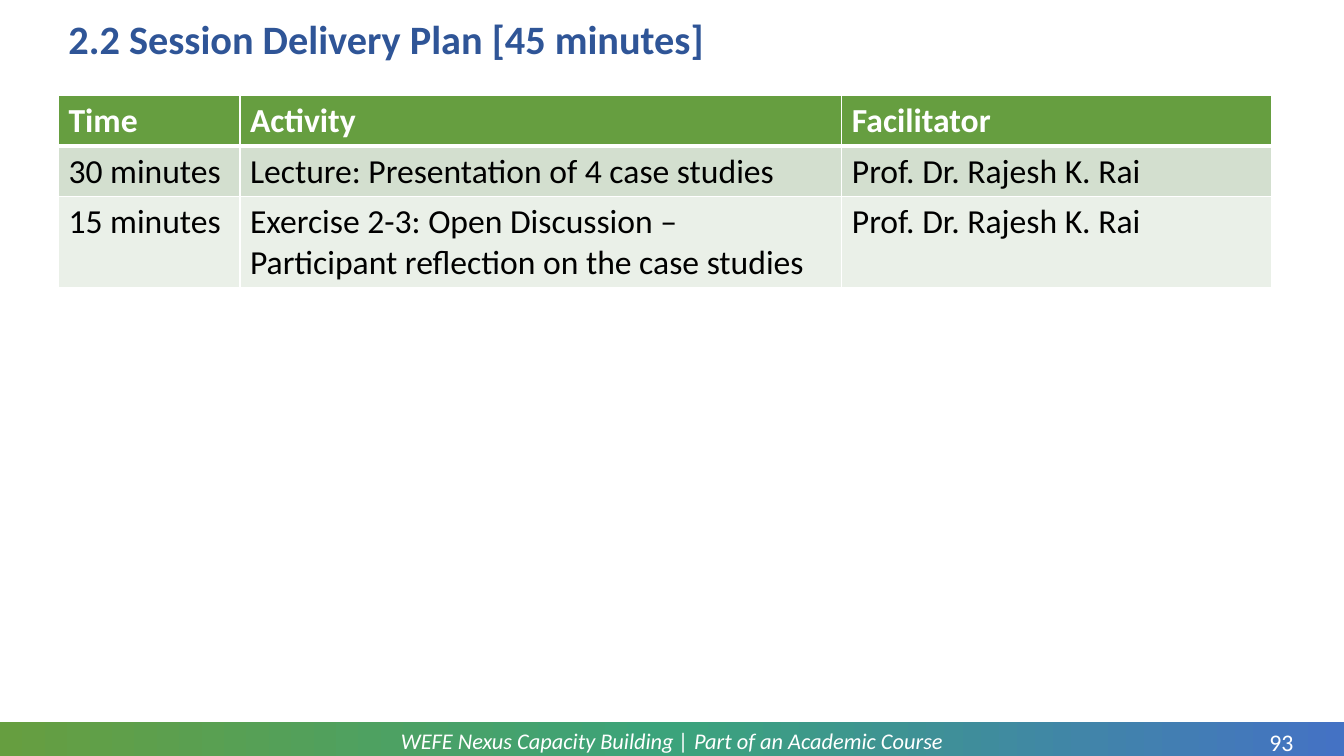
from copy import deepcopy
from dataclasses import dataclass

from lxml.etree import SubElement
from pptx import Presentation
from pptx.dml.color import RGBColor
from pptx.enum.shapes import MSO_SHAPE
from pptx.enum.text import MSO_ANCHOR, PP_ALIGN
from pptx.oxml.ns import qn
from pptx.slide import Slide
from pptx.table import _Cell
from pptx.text.text import TextFrame
from pptx.util import Inches, Pt

SLIDE_WIDTH, SLIDE_HEIGHT = 13.33, 7.5
FONT = "Calibri"
COLOURS = {
    "white": "FFFFFF",
    "black": "000000",
    "title": "2F5597",
    "green": "669E40",
    "teal": "3BA37B",
    "blue": "4472C4",
    "dark_band": "D3DFCF",
    "light_band": "EAF0E8",
}


@dataclass(frozen=True)
class Box:
    left: float
    top: float
    width: float
    height: float

    def lengths(self) -> list[int]:
        return [Inches(value) for value in (self.left, self.top, self.width, self.height)]


@dataclass(frozen=True)
class Label:
    text: str
    box: Box
    size: float
    colour: str = "white"
    bold: bool = False
    italic: bool = False
    align: PP_ALIGN = PP_ALIGN.CENTER
    margin: float = 0
    line_spacing: float = 1.0


@dataclass(frozen=True)
class PlanRow:
    cells: tuple[str, str, str]
    height: float
    fill: str
    colour: str = "black"
    bold: bool = False
    top_border: float = 1
    bottom_border: float = 1


FOOTER = Box(0, 7.16, SLIDE_WIDTH, SLIDE_HEIGHT - 7.16)
LABELS = [
    Label("WEFE Nexus Capacity Building | Part of an Academic Course",
          Box(0.92, 7.17, 11.49, 0.36), 16, italic=True),
    Label("93", Box(12.41, 7.22, 0.6, 0.29), 17),
    Label("2.2 Session Delivery Plan [45 minutes]", Box(0.58, 0.13, 12.15, 0.56), 28.8,
          colour="title", bold=True, align=PP_ALIGN.LEFT, margin=0.1, line_spacing=0.9),
]
COLUMN_WIDTHS = (1.8, 5.97, 4.26)
PLAN = [
    PlanRow(("Time", "Activity", "Facilitator"), 0.5, "green", "white", True, bottom_border=3),
    PlanRow(("30 minutes", "Lecture: Presentation of 4 case studies",
             "Prof. Dr. Rajesh K. Rai"), 0.5, "dark_band", top_border=3),
    PlanRow(("15 minutes",
             "Exercise 2-3: Open Discussion – Participant reflection on the case studies",
             "Prof. Dr. Rajesh K. Rai"), 0.9, "light_band"),
]


def rgb(name: str) -> RGBColor:
    return RGBColor.from_string(COLOURS[name])


def write_text(frame: TextFrame, text: str, *, size: float, colour: str, bold: bool = False,
               italic: bool = False, align: PP_ALIGN = PP_ALIGN.LEFT,
               line_spacing: float = 1.0) -> None:
    paragraph = frame.paragraphs[0]
    paragraph.alignment = align
    paragraph.line_spacing = line_spacing
    run = paragraph.add_run()
    run.text = text
    run.font.name = FONT
    run.font.size = Pt(size)
    run.font.bold = bold
    run.font.italic = italic
    run.font.color.rgb = rgb(colour)


def add_footer_band(slide: Slide) -> None:
    band = slide.shapes.add_shape(MSO_SHAPE.RECTANGLE, *FOOTER.lengths())
    band.shadow.inherit = False
    band.line.fill.background()
    band.fill.gradient()
    band.fill.gradient_angle = 0
    stop_list = band.fill._fill._gradFill.find(qn("a:gsLst"))
    stop_list.insert(1, deepcopy(stop_list[0]))
    for index, (stop, name) in enumerate(zip(band.fill.gradient_stops, ("green", "teal", "blue"))):
        stop.position = index / 2
        stop.color.rgb = rgb(name)


def add_label(slide: Slide, label: Label) -> None:
    frame = slide.shapes.add_textbox(*label.box.lengths()).text_frame
    frame.word_wrap = True
    frame.vertical_anchor = MSO_ANCHOR.MIDDLE
    frame.margin_left = frame.margin_right = Inches(label.margin)
    frame.margin_top = frame.margin_bottom = 0
    write_text(frame, label.text, size=label.size, colour=label.colour, bold=label.bold,
               italic=label.italic, align=label.align, line_spacing=label.line_spacing)


def add_borders(cell: _Cell, top: float, bottom: float) -> None:
    """Draw white cell borders; call before the fill is set, as borders come first."""
    properties = cell._tc.get_or_add_tcPr()
    for tag, width in (("lnL", 1), ("lnR", 1), ("lnT", top), ("lnB", bottom)):
        line = SubElement(properties, qn(f"a:{tag}"), w=str(Pt(width)))
        SubElement(SubElement(line, qn("a:solidFill")), qn("a:srgbClr"), val=COLOURS["white"])


def add_plan_table(slide: Slide) -> None:
    box = Box(0.58, 0.95, sum(COLUMN_WIDTHS), sum(row.height for row in PLAN))
    table = slide.shapes.add_table(len(PLAN), len(COLUMN_WIDTHS), *box.lengths()).table
    for column, width in zip(table.columns, COLUMN_WIDTHS):
        column.width = Inches(width)
    for table_row, plan_row in zip(table.rows, PLAN):
        table_row.height = Inches(plan_row.height)
        for cell, text in zip(table_row.cells, plan_row.cells):
            add_borders(cell, plan_row.top_border, plan_row.bottom_border)
            cell.fill.solid()
            cell.fill.fore_color.rgb = rgb(plan_row.fill)
            write_text(cell.text_frame, text, size=24, colour=plan_row.colour, bold=plan_row.bold)


def main() -> None:
    presentation = Presentation()
    presentation.slide_width = Inches(SLIDE_WIDTH)
    presentation.slide_height = Inches(SLIDE_HEIGHT)
    slide = presentation.slides.add_slide(presentation.slide_layouts[6])
    add_footer_band(slide)
    for label in LABELS:
        add_label(slide, label)
    add_plan_table(slide)
    presentation.save("out.pptx")


if __name__ == "__main__":
    main()
